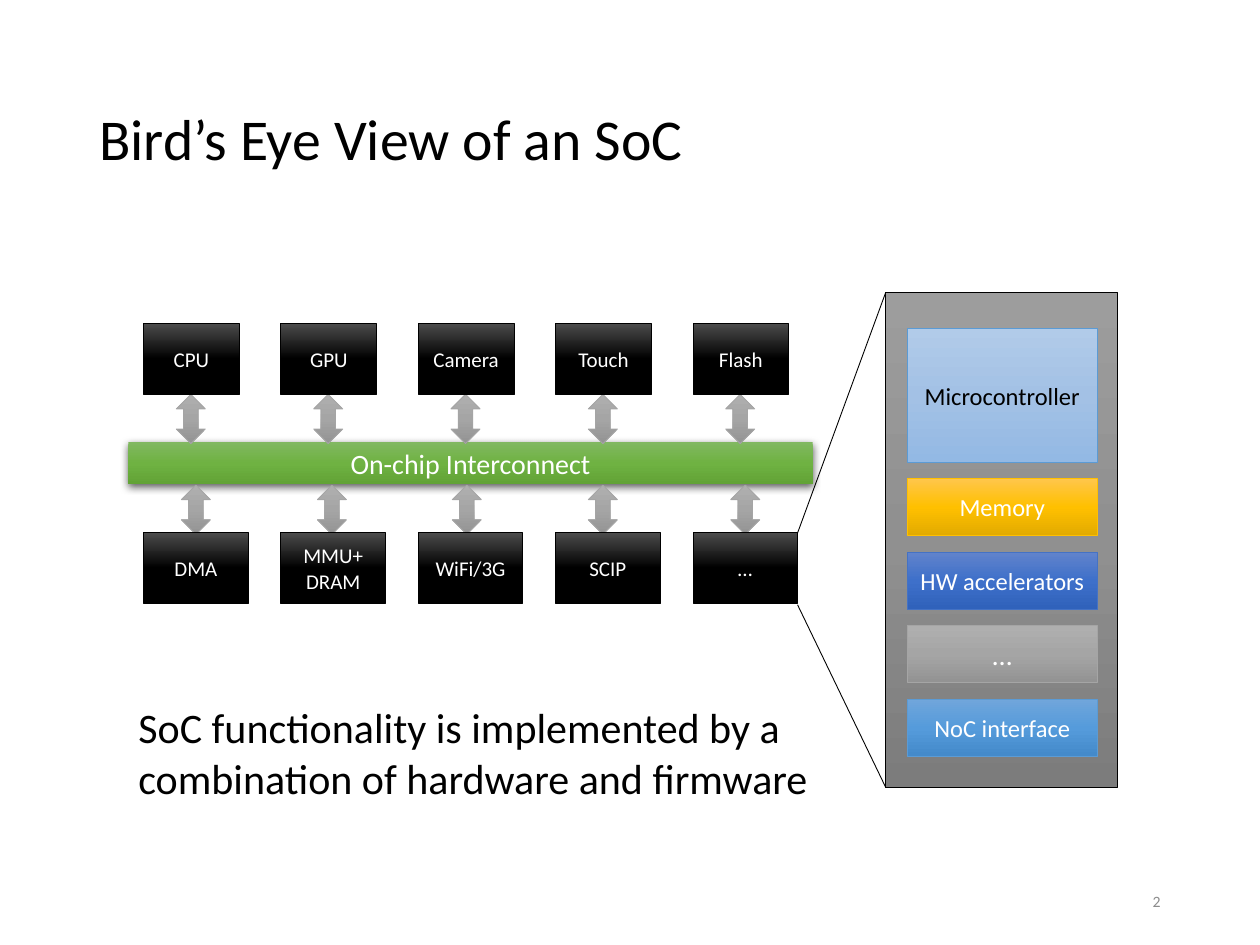
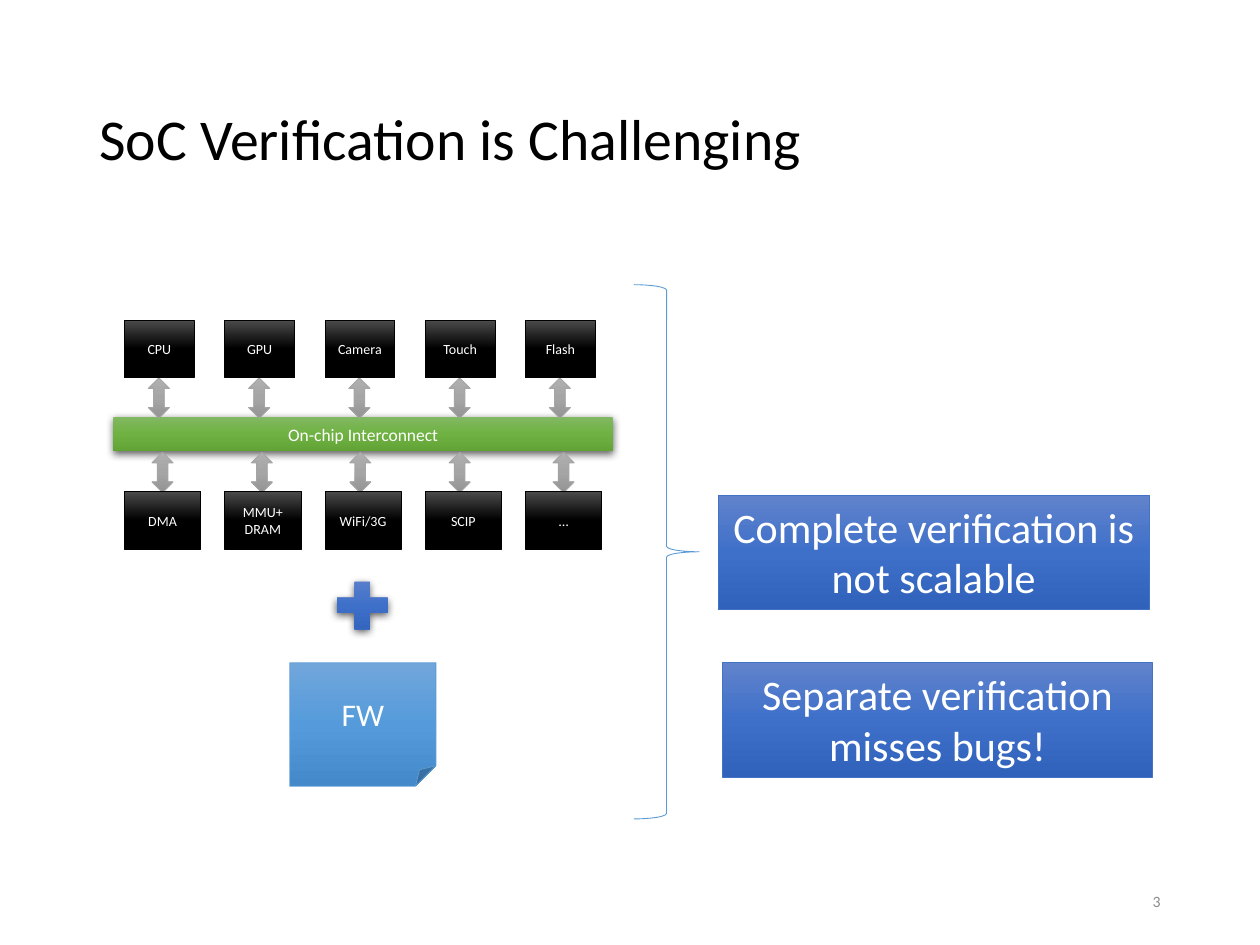
import copy

import pptx
import pptx.dml.color
import pptx.enum.shapes
import pptx.enum.text
import pptx.oxml
import pptx.oxml.ns
import pptx.oxml.xmlchemy
import pptx.util

Inches = pptx.util.Inches
Pt = pptx.util.Pt
color = pptx.dml.color.RGBColor.from_string
qn = pptx.oxml.ns.qn
SHAPE = pptx.enum.shapes.MSO_SHAPE
ALIGN = pptx.enum.text.PP_ALIGN
ANCHOR = pptx.enum.text.MSO_ANCHOR

FONT = "Calibri"
BLACK, WHITE, PAGE_GRAY, BRACE_BLUE = "000000", "FFFFFF", "8C8C8C", "5B9BD5"

# Each look: gradient from top to bottom, then the outline
LOOKS = {
    "black": (("4B4B4B", "000000", "000000"), "000000"),
    "gray": (("AFAFAF", "A5A5A5", "939393"), "A5A5A5"),
    "panel": (("9D9D9D", "909090", "7C7C7C"), "000000"),
    "green": (("81B861", "6FB242", "62A336"), None),
    "pale": (("B1CBE9", "A3C1E5", "93B9E4"), "5B9BD5"),
    "gold": (("FFC64B", "FFC000", "E3AB00"), "FFC000"),
    "blue": (("6183CB", "3E70CA", "3062BB"), "4472C4"),
    "sky": (("71A6DB", "559BDB", "448ACA"), "5B9BD5"),
    "plus": (("6183CB", "3E70CA", "3062BB"), None),
}
SHADOW = (
    '<a:outerShdw xmlns:a="http://schemas.openxmlformats.org/drawingml/2006/main" '
    'blurRad="57150" dist="19050" dir="5400000" algn="ctr" rotWithShape="0">'
    '<a:srgbClr val="000000"><a:alpha val="63000"/></a:srgbClr></a:outerShdw>'
)


def add_block(slide, kind, left, top, width, height, look):
    """Add a gradient shape; looks without an outline cast a shadow."""
    block = slide.shapes.add_shape(
        kind, Inches(left), Inches(top), Inches(width), Inches(height))
    stops, outline = LOOKS[look]
    block.fill.gradient()
    block.fill.gradient_angle = 270
    stop_list = block.element.spPr.find(".//" + qn("a:gsLst"))
    stop_list.append(copy.deepcopy(stop_list[-1]))
    for stop, position, shade in zip(block.fill.gradient_stops, (0, 0.5, 1), stops):
        stop.position = position
        stop.color.rgb = color(shade)
    block.shadow.inherit = False
    if outline:
        block.line.color.rgb = color(outline)
        block.line.width = Pt(0.5)
    else:
        block.line.fill.background()
        block.element.spPr.find(qn("a:effectLst")).append(pptx.oxml.parse_xml(SHADOW))
    return block


def write(holder, lines, size, shade=WHITE, align=ALIGN.CENTER,
          anchor=ANCHOR.MIDDLE, margin=0.05, spacing=None):
    """Write one paragraph per line of text."""
    frame = holder.text_frame
    frame.word_wrap = True
    frame.vertical_anchor = anchor
    frame.margin_left = frame.margin_right = Inches(margin)
    for index, line in enumerate(lines.split("\n")):
        paragraph = frame.add_paragraph() if index else frame.paragraphs[0]
        paragraph.alignment = align
        paragraph.line_spacing = spacing
        run = paragraph.add_run()
        run.text = line
        run.font.name = FONT
        run.font.size = Pt(size)
        run.font.color.rgb = color(shade)


deck = pptx.Presentation()
deck.slide_width, deck.slide_height = Inches(10), Inches(7.5)

# Interconnect diagram at full size: labels, box top, box width, arrow top, arrow lefts
PITCH = 1.09
DIAGRAM_LEFT, DIAGRAM_TOP = 1.02, 2.57
ROWS = [
    (("CPU", "GPU", "Camera", "Touch", "Flash"), 2.57, 0.76, 3.13,
     (1.4, 2.49, 3.58, 4.67, 5.76)),
    (("DMA", "MMU+\nDRAM", "WiFi/3G", "SCIP", "…"), 4.23, 0.83, 3.85,
     (1.44, 2.52, 3.59, 4.67, 5.8)),
]

# Title, page, diagram left and top, horizontal and vertical scale, bus and box text sizes
PAGES = [
    ("Bird’s Eye View of an SoC", "2", 1.02, 2.57, 1, 1, 16, 12),
    ("SoC Verification is Challenging", "3", 0.9, 2.54, 0.73, 0.82, 10, 8),
]
slides = []
for title, page, left, top, x_scale, y_scale, bus_size, box_size in PAGES:
    slide = deck.slides.add_slide(deck.slide_layouts[6])
    slides.append(slide)

    # Title and page number
    heading = slide.shapes.add_textbox(Inches(0.69), Inches(0.4), Inches(8.62), Inches(1.45))
    write(heading, title, 33, BLACK, ALIGN.LEFT, margin=0.1, spacing=0.9)
    footer = slide.shapes.add_textbox(Inches(7.06), Inches(6.95), Inches(2.25), Inches(0.4))
    write(footer, page, 9, PAGE_GRAY, ALIGN.RIGHT, margin=0.1)

    # Parts of the diagram, before scaling
    parts = [(SHAPE.RECTANGLE, DIAGRAM_LEFT, 3.51, 5.43, 0.33, "green",
              "On-chip Interconnect", bus_size)]
    for labels, box_top, box_width, arrow_top, arrow_lefts in ROWS:
        for column, (label, arrow_left) in enumerate(zip(labels, arrow_lefts)):
            parts.append((SHAPE.UP_DOWN_ARROW, arrow_left, arrow_top, 0.23, 0.39,
                          "gray", None, None))
            parts.append((SHAPE.RECTANGLE, 1.14 + column * PITCH, box_top, box_width, 0.56,
                          "black", label, box_size))
    for kind, x, y, width, height, look, label, size in parts:
        part = add_block(slide, kind,
                         left + (x - DIAGRAM_LEFT) * x_scale,
                         top + (y - DIAGRAM_TOP) * y_scale,
                         width * x_scale, height * y_scale, look)
        if label:
            write(part, label, size)

overview, challenge = slides

# Overview: inside one block
add_block(overview, SHAPE.RECTANGLE, 7.03, 2.32, 1.84, 3.93, "panel")
microcontroller = add_block(overview, SHAPE.RECTANGLE, 7.2, 2.61, 1.51, 1.06, "pale")
write(microcontroller, "Microcontroller", 14, BLACK)
UNITS = [("Memory", "gold", 14), ("HW accelerators", "blue", 14),
         ("…", "gray", 16), ("NoC interface", "sky", 14)]
UNIT_PITCH = (5.55 - 3.8) / (len(UNITS) - 1)
for index, (label, look, size) in enumerate(UNITS):
    unit = add_block(overview, SHAPE.RECTANGLE,
                     7.2, 3.8 + index * UNIT_PITCH, 1.51, 0.45, look)
    write(unit, label, size)

# Overview: zoom lines from the last box to the panel
for box_corner, panel_corner in ((4.23, 2.32), (4.8, 6.25)):
    zoom = overview.shapes.add_connector(
        pptx.enum.shapes.MSO_CONNECTOR.STRAIGHT,
        Inches(6.33), Inches(box_corner), Inches(7.03), Inches(panel_corner))
    zoom.line.color.rgb = color(BLACK)
    zoom.line.width = Pt(0.5)
    zoom.element.spPr.append(pptx.oxml.xmlchemy.OxmlElement("a:effectLst"))

# Overview: summary
summary = overview.shapes.add_textbox(Inches(1), Inches(5.52), Inches(5.66), Inches(0.91))
write(summary, "SoC functionality is implemented by a combination of hardware and firmware",
      24, BLACK, ALIGN.LEFT, ANCHOR.TOP, margin=0.1)

# Challenge: hardware plus firmware
firmware = add_block(challenge, SHAPE.FOLDED_CORNER, 2.3, 5.26, 1.16, 0.98, "sky")
write(firmware, "FW", 18)
add_block(challenge, SHAPE.MATH_PLUS, 2.6, 4.55, 0.55, 0.51, "plus")

# Challenge: brace and conclusions
brace = challenge.shapes.add_shape(
    SHAPE.RIGHT_BRACE, Inches(5.03), Inches(2.26), Inches(0.52), Inches(4.24))
brace.fill.background()
brace.line.color.rgb = color(BRACE_BLUE)
brace.line.width = Pt(0.5)
brace.shadow.inherit = False
for left, top, conclusion in ((5.7, 3.93, "Complete verification is not scalable"),
                              (5.73, 5.26, "Separate verification misses bugs!")):
    callout = add_block(challenge, SHAPE.RECTANGLE, left, top, 3.42, 0.91, "blue")
    write(callout, conclusion, 24, anchor=ANCHOR.TOP)

deck.save("out.pptx")
